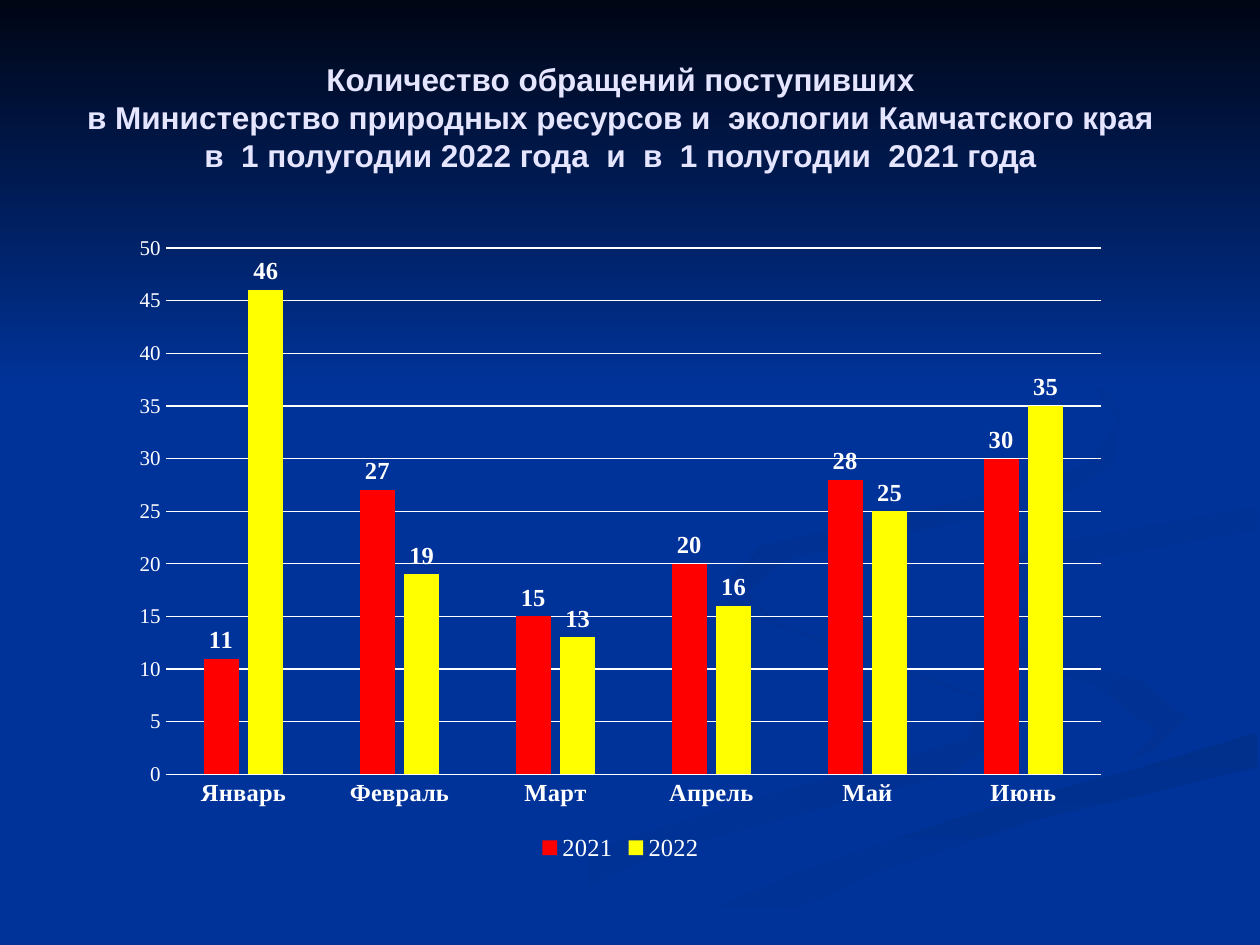
from pptx import Presentation
from pptx.chart.data import CategoryChartData
from pptx.dml.color import RGBColor as Rgb
from pptx.enum.chart import XL_CHART_TYPE as ChartType, XL_LABEL_POSITION as LabelPos
from pptx.enum.chart import XL_LEGEND_POSITION as LegendPos, XL_TICK_MARK as Tick
from pptx.enum.shapes import MSO_SHAPE as Shape
from pptx.enum.text import MSO_ANCHOR as Anchor, PP_ALIGN as Align
from pptx.util import Inches, Pt

WIDTH, HEIGHT = 10, 7.5
UNIT = Inches(0.01)
COLORS = {
    "blue": "003399", "night": "000514", "title": "E5E5FF", "white": "FFFFFF",
    "red": "FF0000", "yellow": "FFFF00", "shade": "003193", "deep": "002F8C",
    "mist": "003091", "curl": "002F8E",
}
TITLE = [
    "Количество обращений поступивших",
    "в Министерство природных ресурсов и  экологии Камчатского края",
    "в  1 полугодии 2022 года  и  в  1 полугодии  2021 года",
]
MONTHS = ["Январь", "Февраль", "Март", "Апрель", "Май", "Июнь"]
SERIES = [
    ("2021", "red", [11, 27, 15, 20, 28, 30]),
    ("2022", "yellow", [46, 19, 13, 16, 25, 35]),
]
TITLE_BOX = (0.035, 0.04, 0.915, 0.167)
CHART_BOX = (0.095, 0.237, 0.795, 0.68)
SKY_BOX = (0, 0, 1, 0.41)
TITLE_FONT = {"name": "Arial", "size": Pt(18), "bold": True}
CHART_FONT = {"name": "Times New Roman", "size": Pt(10), "bold": False}
AXIS_FONT = {**CHART_FONT, "size": Pt(12)}
LEGEND_FONT = {**CHART_FONT, "size": Pt(14)}
LABEL_FONT = {**LEGEND_FONT, "bold": True}

SWIRLS = [
    ("blue", "shade", 0, [
        (781, 553), (682, 519), (594, 485), (575, 459), (581, 484), (679, 519),
        (781, 556), (767, 587), (616, 629), (417, 690), (300, 749), (361, 749),
        (532, 674), (756, 614), (800, 581)]),
    ("blue", "shade", 45, [
        (943, 570), (905, 540), (792, 509), (724, 464), (746, 500), (868, 544),
        (918, 581), (894, 605), (937, 586)]),
    ("deep", "blue", 90, [
        (503, 749), (571, 749), (695, 692), (821, 651), (998, 609), (998, 581),
        (903, 610), (764, 647), (630, 693)]),
    ("blue", "blue", 0, [
        (725, 464), (759, 498), (905, 540), (943, 570), (911, 600), (743, 643),
        (573, 703), (477, 749), (503, 749), (630, 693), (765, 647), (999, 581),
        (999, 538), (866, 509), (781, 463), (822, 434), (999, 402), (999, 387),
        (788, 422), (732, 446)]),
    ("mist", "blue", 45, [
        (781, 460), (797, 483), (826, 496), (805, 476), (843, 448), (998, 420),
        (998, 402), (821, 434)]),
    ("curl", "blue", 45, [
        (683, 430), (825, 402), (883, 370), (890, 324), (843, 275), (762, 233),
        (846, 279), (889, 335), (861, 370), (763, 398), (605, 433), (577, 462),
        (622, 500), (593, 470), (624, 444)]),
]


def rgb(name):
    return Rgb.from_string(COLORS[name])


def place(shares):
    sides = (WIDTH, HEIGHT, WIDTH, HEIGHT)
    return [Inches(share * side) for share, side in zip(shares, sides)]


def style_font(font, values, color="white"):
    for key, value in values.items():
        setattr(font, key, value)
    font.color.rgb = rgb(color)


def style_line(line):
    line.color.rgb = rgb("white")
    line.width = Pt(0.75)


def paint(shape, first, last, angle):
    fill = shape.fill
    if first == last:
        fill.solid()
        fill.fore_color.rgb = rgb(first)
    else:
        fill.gradient()
        fill.gradient_angle = -angle % 360
        for stop, color in zip(fill.gradient_stops, (first, last)):
            stop.color.rgb = rgb(color)
    shape.line.fill.background()
    shape.shadow.inherit = False


def add_backdrop(page):
    page.background.fill.solid()
    page.background.fill.fore_color.rgb = rgb("blue")
    for first, last, angle, points in SWIRLS:
        builder = page.shapes.build_freeform(*points[0], scale=UNIT)
        builder.add_line_segments(points[1:], close=True)
        paint(builder.convert_to_shape(), first, last, angle)
    sky = page.shapes.add_shape(Shape.RECTANGLE, *place(SKY_BOX))
    paint(sky, "night", "blue", 90)


def add_title(page):
    frame = page.shapes.add_textbox(*place(TITLE_BOX)).text_frame
    frame.word_wrap = True
    frame.vertical_anchor = Anchor.MIDDLE
    para = frame.paragraphs[0]
    para.text = "\v".join(TITLE)
    para.alignment = Align.CENTER
    for span in para.runs:
        style_font(span.font, TITLE_FONT, "title")


def add_columns(page):
    data = CategoryChartData()
    data.categories = MONTHS
    for name, color, values in SERIES:
        data.add_series(name, values)
    chart = page.shapes.add_chart(
        ChartType.COLUMN_CLUSTERED, *place(CHART_BOX), data).chart
    style_font(chart.font, CHART_FONT)
    chart.has_title = False
    chart.has_legend = True
    chart.legend.position = LegendPos.BOTTOM
    chart.legend.include_in_layout = False
    style_font(chart.legend.font, LEGEND_FONT)

    months, counts = chart.category_axis, chart.value_axis
    for axis, font in ((months, LABEL_FONT), (counts, AXIS_FONT)):
        axis.major_tick_mark = axis.minor_tick_mark = Tick.NONE
        style_font(axis.tick_labels.font, font)
    style_line(months.format.line)
    counts.format.line.fill.background()
    counts.minimum_scale, counts.maximum_scale, counts.major_unit = 0, 50, 5
    style_line(counts.major_gridlines.format.line)

    plot = chart.plots[0]
    plot.vary_by_categories = False
    plot.gap_width, plot.overlap = 219, -27
    for series, (name, color, values) in zip(plot.series, SERIES):
        series.format.fill.solid()
        series.format.fill.fore_color.rgb = rgb(color)
        labels = series.data_labels
        labels.show_value = True
        labels.position = LabelPos.OUTSIDE_END
        style_font(labels.font, LABEL_FONT)


def main():
    deck = Presentation()
    deck.slide_width, deck.slide_height = Inches(WIDTH), Inches(HEIGHT)
    page = deck.slides.add_slide(deck.slide_layouts[6])
    add_backdrop(page)
    add_title(page)
    add_columns(page)
    deck.save("out.pptx")


if __name__ == "__main__":
    main()
